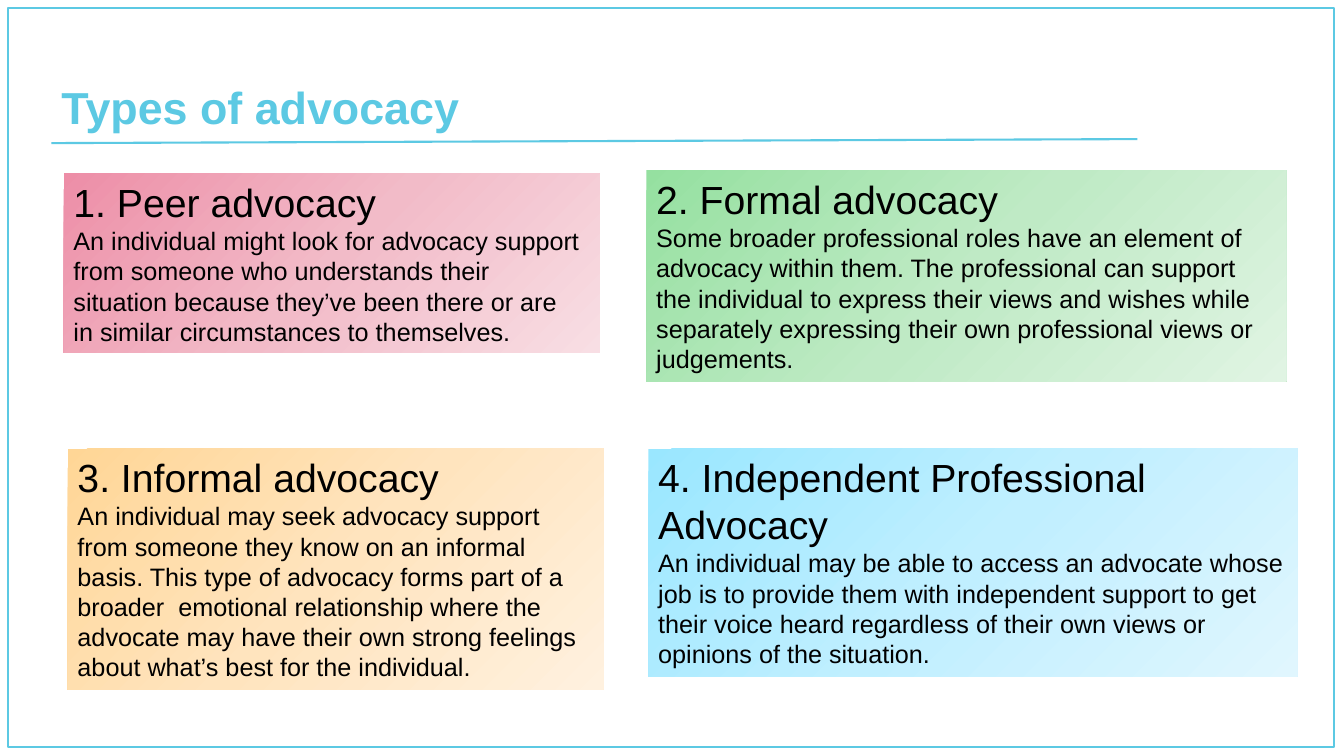
from copy import deepcopy
from dataclasses import dataclass

from pptx import Presentation
from pptx.dml.color import RGBColor
from pptx.enum.shapes import MSO_CONNECTOR, MSO_SHAPE
from pptx.enum.text import MSO_ANCHOR as Anchor, MSO_AUTO_SIZE as AutoSize, PP_ALIGN as Align
from pptx.oxml.ns import qn
from pptx.oxml.xmlchemy import OxmlElement
from pptx.util import Inches, Pt

TITLE = "Types of advocacy"
TITLE_AREA = (0.51, 0.29, 7.8, 1.09)
FRAME_AREA = (0.08, 0.08, 13.15, 7.33)
RULE_ENDS = (0.51, 1.42, 11.28, 1.38)

CARDS = [
    {
        "area": (0.63, 1.72, 5.32, 1.78),
        "tint": "pink",
        "heading": "1. Peer advocacy",
        "body": [
            "An individual might look for advocacy support",
            "from someone who understands their situation because they’ve been there or are \n"
            "in similar circumstances to themselves.",
        ],
    },
    {
        "area": (6.41, 1.69, 6.35, 2.09),
        "tint": "green",
        "heading": "2. Formal advocacy",
        "body": [
            "Some broader professional roles have an element of advocacy within them. "
            "The professional can support the individual to express their views and wishes "
            "while separately expressing their own professional views or judgements.",
        ],
    },
    {
        "area": (0.67, 4.45, 5.32, 2.39),
        "tint": "orange",
        "heading": "3. Informal advocacy",
        "body": [
            "An individual may seek advocacy support from someone they know on an informal "
            "basis. This type of advocacy forms part of a broader  emotional relationship "
            "where the advocate may have their own strong feelings about what’s best for "
            "the individual.",
        ],
    },
    {
        "area": (6.43, 4.45, 6.44, 2.26),
        "tint": "blue",
        "heading": "4. Independent Professional Advocacy",
        "body": [
            "An individual may be able to access an advocate whose job is to provide them "
            "with independent support to get their voice heard regardless of their own "
            "views or opinions of the situation.",
        ],
    },
]


@dataclass(frozen=True)
class Theme:
    font = "Arial"
    accent = RGBColor.from_string("5CC9E3")
    ink = RGBColor.from_string("000000")
    title_size = Pt(32)
    heading_size = Pt(28)
    body_size = Pt(18)
    gradients = {
        "pink": ("ED8EA7", "F2BBC8", "F8DEE4"),
        "green": ("95E0A0", "BFEAC5", "E0F4E3"),
        "orange": ("FFD696", "FFE4BE", "FFF1DF"),
        "blue": ("9AE7FF", "C0EFFF", "E0F6FE"),
    }


THEME = Theme()


def inches(lengths):
    return [Inches(length) for length in lengths]


def apply(target, values):
    for name, value in values.items():
        setattr(target, name, value)


def write(para, text, size, color, bold=False):
    para.text = text
    for span in para.runs:
        apply(span.font, {"name": THEME.font, "size": size, "bold": bold})
        span.font.color.rgb = color


def add_box(page, area):
    box = page.shapes.add_shape(MSO_SHAPE.RECTANGLE, *inches(area))
    box.shadow.inherit = False
    return box


def fill_gradient(box, colors):
    """Blend three colours evenly from the top left to the bottom right."""
    box.fill.gradient()
    box.fill.gradient_angle = 315
    stop_list = box.fill._xPr.find(qn("a:gradFill")).find(qn("a:gsLst"))
    stop_list.append(deepcopy(stop_list[-1]))
    for index, (stop, color) in enumerate(zip(box.fill.gradient_stops, colors)):
        stop.position = index / 2
        stop.color.rgb = RGBColor.from_string(color)


def add_frame(page):
    frame = add_box(page, FRAME_AREA)
    frame.fill.background()
    frame.line.color.rgb = THEME.accent
    frame.line.width = Pt(1)


def add_rule(page):
    rule = page.shapes.add_connector(MSO_CONNECTOR.STRAIGHT, *inches(RULE_ENDS))
    rule.line.color.rgb = THEME.accent
    rule.line.width = Pt(1.5)
    rule._element.spPr.append(OxmlElement("a:effectLst"))


def set_title(page):
    title = page.shapes.title
    apply(title, dict(zip(("left", "top", "width", "height"), inches(TITLE_AREA))))
    apply(title.text_frame, {"vertical_anchor": Anchor.BOTTOM, "word_wrap": True,
                             "auto_size": AutoSize.NONE})
    para = title.text_frame.paragraphs[0]
    write(para, TITLE, THEME.title_size, THEME.accent, bold=True)
    apply(para, {"alignment": Align.LEFT, "line_spacing": 0.9})


def add_card(page, card):
    box = add_box(page, card["area"])
    fill_gradient(box, THEME.gradients[card["tint"]])
    box.line.fill.background()
    frame = box.text_frame
    apply(frame, {"word_wrap": True, "vertical_anchor": Anchor.TOP,
                  "auto_size": AutoSize.SHAPE_TO_FIT_TEXT})
    write(frame.paragraphs[0], card["heading"], THEME.heading_size, THEME.ink)
    for text in card["body"]:
        write(frame.add_paragraph(), text, THEME.body_size, THEME.ink)
    for para in frame.paragraphs:
        para.alignment = Align.LEFT


def main():
    deck = Presentation()
    apply(deck, {"slide_width": Inches(13.33), "slide_height": Inches(7.5)})
    page = deck.slides.add_slide(deck.slide_layouts[5])
    add_rule(page)
    add_frame(page)
    set_title(page)
    for card in CARDS:
        add_card(page, card)
    deck.save("out.pptx")


if __name__ == "__main__":
    main()
